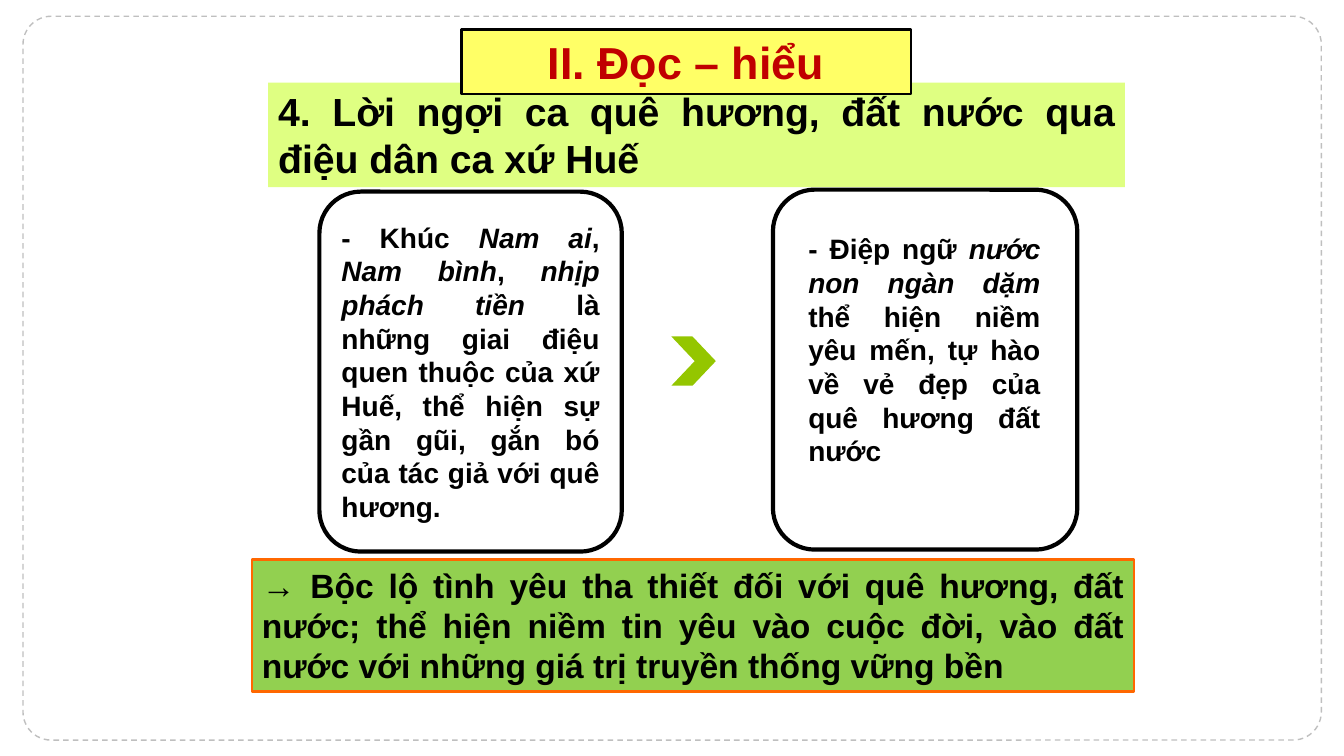
import pptx
import pptx.util
import pptx.dml.color
import pptx.enum.dml
import pptx.enum.shapes
import pptx.enum.text

Cm = pptx.util.Cm
Pt = pptx.util.Pt
RGBColor = pptx.dml.color.RGBColor
SHAPE = pptx.enum.shapes.MSO_SHAPE
ALIGN = pptx.enum.text.PP_ALIGN
ANCHOR = pptx.enum.text.MSO_ANCHOR
FIT = pptx.enum.text.MSO_AUTO_SIZE
DASH = pptx.enum.dml.MSO_LINE

BLACK = RGBColor(0x00, 0x00, 0x00)
GREY = RGBColor(0xBF, 0xBF, 0xBF)
RED = RGBColor(0xC0, 0x00, 0x00)
ORANGE = RGBColor(0xFF, 0x67, 0x00)
YELLOW = RGBColor(0xFF, 0xFF, 0x66)
LIME = RGBColor(0xDF, 0xFF, 0x82)
GREEN = RGBColor(0x92, 0xD0, 0x50)
LEAF = RGBColor(0x94, 0xC6, 0x00)

# Each text is a list of (words, italic)
TITLE = [("II. Đọc – hiểu", False)]
HEADING = [("4. Lời ngợi ca quê hương, đất nước qua điệu dân ca xứ Huế", False)]
MELODIES = [
    ("- Khúc ", False),
    ("Nam ai", True),
    (", ", False),
    ("Nam bình", True),
    (", ", False),
    ("nhịp phách tiền ", True),
    ("là những giai điệu quen thuộc của xứ Huế, thể hiện sự gần gũi, "
     "gắn bó của tác giả với quê hương.", False),
]
REFRAIN = [
    ("- Điệp ngữ ", False),
    ("nước non ngàn dặm ", True),
    ("thể hiện niềm yêu mến, tự hào về vẻ đẹp của quê hương đất nước", False),
]
CONCLUSION = [
    ("→ Bộc lộ tình yêu tha thiết đối với quê hương, đất nước; thể hiện niềm tin yêu "
     "vào cuộc đời, vào đất nước với những giá trị truyền thống vững bền", False),
]

# Left, top, width, height in centimetres
FRAME_AT = (0.58, 0.41, 32.72, 18.24)
HEADING_AT = (6.76, 2.08, 21.59, 2.64)
CONCLUSION_AT = (6.35, 14.1, 22.23, 3.33)
MELODIES_AT = (8.05, 4.83, 7.62, 9.07)
REFRAIN_CARD_AT = (19.48, 4.78, 7.67, 9.07)
REFRAIN_AT = (20.12, 5.72, 6.35, 6.25)
CHEVRON_AT = (16.92, 8.48, 1.12, 1.24)
TITLE_AT = (11.63, 0.74, 11.33, 1.63)
CARD_ROUNDING = 0.137


def add_box(page, kind, place, fill=None, line=None, width=1, adjust=None):
    box = page.shapes.add_shape(kind, *map(Cm, place))
    box.shadow.inherit = False
    if adjust is not None:
        box.adjustments[0] = adjust
    if fill is None:
        box.fill.background()
    else:
        box.fill.solid()
        box.fill.fore_color.rgb = fill
    if line is None:
        box.line.fill.background()
    else:
        box.line.color.rgb = line
        box.line.width = Pt(width)
    return box


def write(box, text, size, color=BLACK, align=ALIGN.JUSTIFY, anchor=ANCHOR.TOP,
          fit=FIT.SHAPE_TO_FIT_TEXT):
    frame = box.text_frame
    frame.word_wrap = True
    frame.auto_size = fit
    frame.vertical_anchor = anchor
    para = frame.paragraphs[0]
    para.alignment = align
    for words, italic in text:
        span = para.add_run()
        span.text = words
        span.font.name = "Arial"
        span.font.size = Pt(size)
        span.font.bold = True
        span.font.italic = italic
        span.font.color.rgb = color


def main():
    deck = pptx.Presentation()
    deck.slide_width, deck.slide_height = Cm(33.87), Cm(19.05)
    page = deck.slides.add_slide(deck.slide_layouts[6])

    frame = add_box(page, SHAPE.ROUNDED_RECTANGLE, FRAME_AT, line=GREY, adjust=0.039)
    frame.line.dash_style = DASH.DASH

    write(add_box(page, SHAPE.RECTANGLE, HEADING_AT, LIME), HEADING, 28)
    write(add_box(page, SHAPE.RECTANGLE, CONCLUSION_AT, GREEN, ORANGE, 2), CONCLUSION, 24)

    melodies_card, _ = [
        add_box(page, SHAPE.ROUNDED_RECTANGLE, place, line=BLACK, width=3, adjust=CARD_ROUNDING)
        for place in (MELODIES_AT, REFRAIN_CARD_AT)
    ]
    write(melodies_card, MELODIES, 20, anchor=ANCHOR.MIDDLE, fit=FIT.NONE)
    add_box(page, SHAPE.CHEVRON, CHEVRON_AT, LEAF, adjust=0.525)
    write(page.shapes.add_textbox(*map(Cm, REFRAIN_AT)), REFRAIN, 20)

    title = add_box(page, SHAPE.RECTANGLE, TITLE_AT, YELLOW, BLACK, 2)
    write(title, TITLE, 32, RED, ALIGN.CENTER)

    deck.save("out.pptx")


if __name__ == "__main__":
    main()
